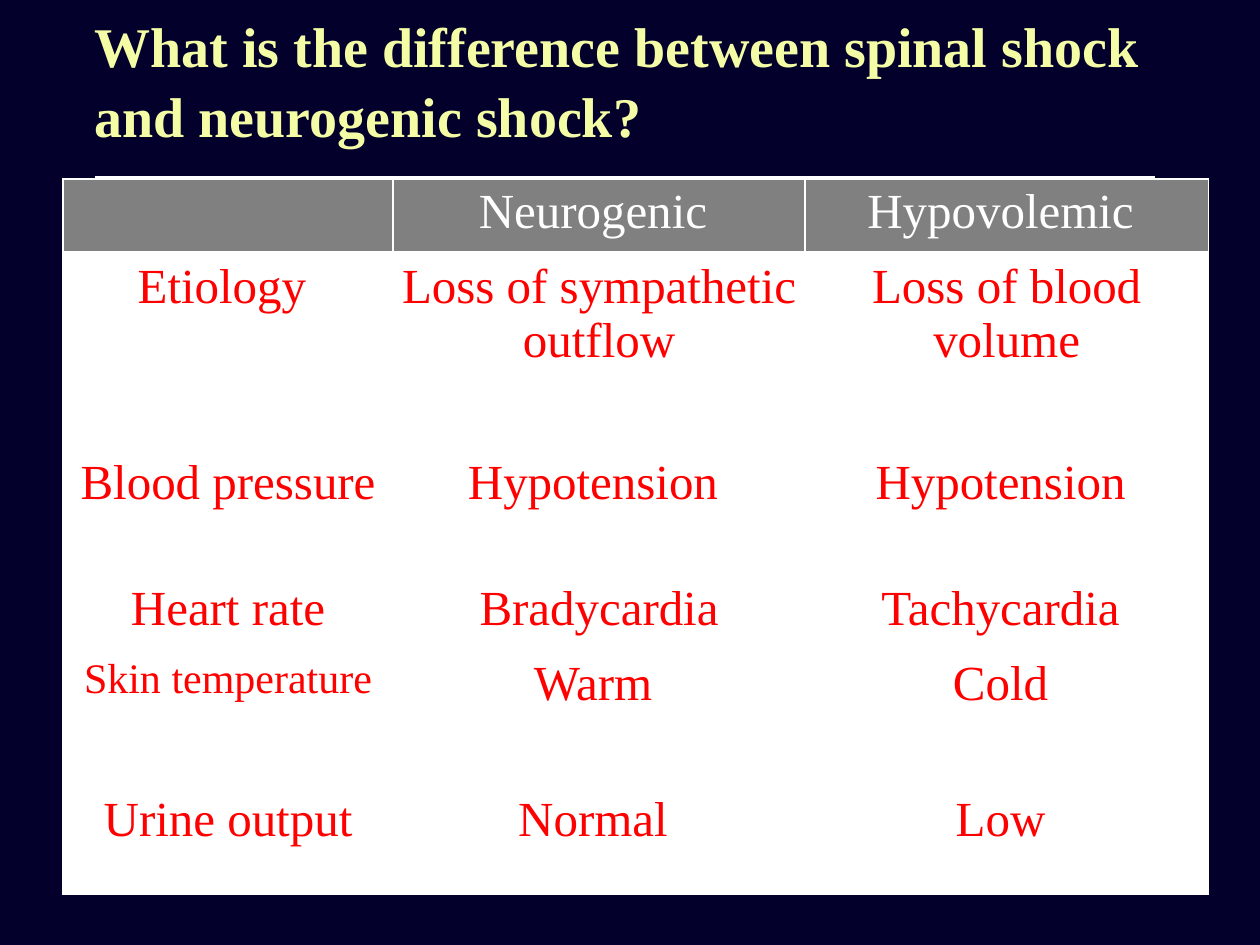
"""Build a slide comparing neurogenic and hypovolemic shock."""
from dataclasses import dataclass

from lxml.etree import SubElement
from pptx import Presentation
from pptx.dml.color import RGBColor
from pptx.enum.shapes import MSO_CONNECTOR
from pptx.enum.text import MSO_ANCHOR, PP_ALIGN
from pptx.oxml.ns import qn
from pptx.util import Inches, Pt


@dataclass(frozen=True)
class Theme:
    font: str = "Times New Roman"
    background: str = "03012B"
    title: str = "F4FCA6"
    light: str = "FFFFFF"
    header: str = "808080"
    finding: str = "FF0000"
    title_size: int = 32
    body_size: int = 28
    small_size: int = 24
    inset: float = 0.05
    thin: int = 1
    thick: int = 3


def write(frame, text, *, font, size, color, bold=False, align=PP_ALIGN.LEFT, spacing=None):
    paragraph = frame.paragraphs[0]
    paragraph.alignment = align
    paragraph.line_spacing = spacing
    run = paragraph.add_run()
    run.text = text
    run.font.name = font
    run.font.size = Pt(size)
    run.font.bold = bold
    run.font.color.rgb = RGBColor.from_string(color)


class SlideBuilder:
    def __init__(self, slide, theme):
        self.slide = slide
        self.theme = theme
        slide.background.fill.solid()
        slide.background.fill.fore_color.rgb = RGBColor.from_string(theme.background)

    def inset(self, target):
        margin = Inches(self.theme.inset)
        target.margin_left = target.margin_right = margin
        target.margin_top = target.margin_bottom = margin

    def title(self, text, left, top, width, height):
        frame = self.slide.shapes.add_textbox(
            Inches(left), Inches(top), Inches(width), Inches(height)
        ).text_frame
        frame.word_wrap = True
        frame.vertical_anchor = MSO_ANCHOR.MIDDLE
        self.inset(frame)
        write(frame, text, font=self.theme.font, size=self.theme.title_size,
              color=self.theme.title, bold=True, spacing=1.04)

    def rule(self, left, right, y):
        divider = self.slide.shapes.add_connector(
            MSO_CONNECTOR.STRAIGHT, Inches(left), Inches(y), Inches(right), Inches(y)
        )
        divider.line.color.rgb = RGBColor.from_string(self.theme.light)
        divider.line.width = Pt(self.theme.thick)
        SubElement(divider.element.spPr, qn("a:effectLst"))

    def border(self, cell, edge, width):
        properties = cell._tc.get_or_add_tcPr()
        line = SubElement(properties, qn(f"a:ln{edge}"), w=str(Pt(width)))
        fill = SubElement(line, qn("a:solidFill"))
        SubElement(fill, qn("a:srgbClr"), val=self.theme.light)

    def cell(self, cell, text, size, is_header, below_header):
        theme = self.theme
        self.inset(cell)
        for edge in "LRTB":
            heavy = (is_header and edge == "B") or (below_header and edge == "T")
            self.border(cell, edge, theme.thick if heavy else theme.thin)
        cell.fill.solid()
        cell.fill.fore_color.rgb = RGBColor.from_string(theme.header if is_header else theme.light)
        if text:
            write(cell.text_frame, text, font=theme.font, size=size, align=PP_ALIGN.CENTER,
                  color=theme.light if is_header else theme.finding)

    def table(self, rows, left, top, widths, heights, small_labels=()):
        grid = self.slide.shapes.add_table(
            len(rows), len(widths), Inches(left), Inches(top),
            Inches(sum(widths)), Inches(sum(heights))
        ).table
        for column, width in zip(grid.columns, widths):
            column.width = Inches(width)
        for index, (row, height, texts) in enumerate(zip(grid.rows, heights, rows)):
            row.height = Inches(height)
            for cell, text in zip(row.cells, texts):
                size = self.theme.small_size if text in small_labels else self.theme.body_size
                self.cell(cell, text, size, index == 0, index == 1)


def main():
    presentation = Presentation()
    presentation.slide_width = Inches(10)
    presentation.slide_height = Inches(7.5)
    slide = presentation.slides.add_slide(presentation.slide_layouts[6])
    builder = SlideBuilder(slide, Theme())

    builder.title("What is the difference between spinal shock and neurogenic shock?",
                  0.7, 0, 8.5, 1.25)
    builder.rule(0.75, 9.17, 1.42)
    comparison = [
        ("", "Neurogenic ", "Hypovolemic "),
        ("Etiology ", "Loss of sympathetic outflow", "Loss of blood volume"),
        ("Blood pressure", "Hypotension ", "Hypotension "),
        ("Heart rate", "Bradycardia", "Tachycardia "),
        ("Skin temperature", "Warm ", "Cold "),
        ("Urine output", "Normal ", "Low "),
    ]
    builder.table(comparison, 0.5, 1.42, widths=(2.62, 3.27, 3.2),
                  heights=(0.59, 1.56, 1, 0.59, 1.08, 0.86),
                  small_labels=("Skin temperature",))
    presentation.save("out.pptx")


if __name__ == "__main__":
    main()
